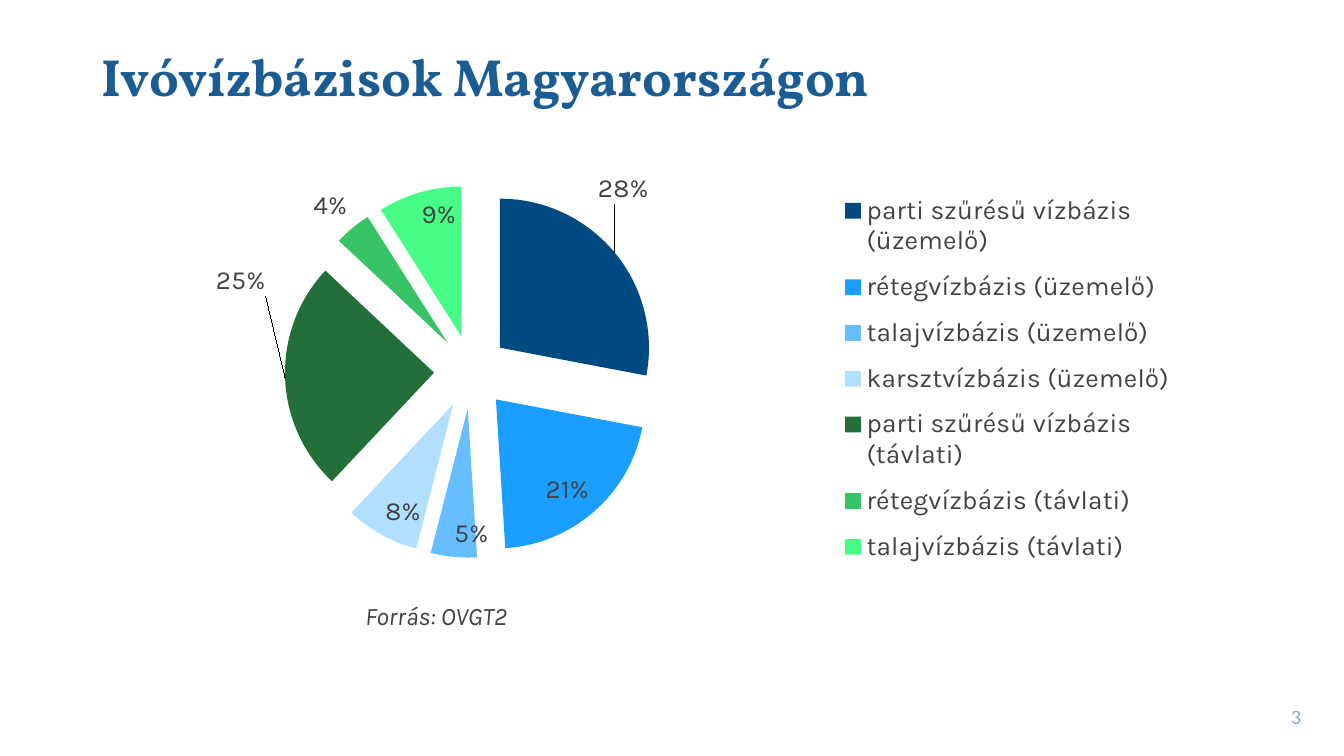
from lxml import etree
from pptx import Presentation
from pptx.chart.data import CategoryChartData
from pptx.dml.color import RGBColor
from pptx.enum.chart import XL_CHART_TYPE, XL_LABEL_POSITION, XL_LEGEND_POSITION
from pptx.enum.text import MSO_ANCHOR, MSO_AUTO_SIZE
from pptx.oxml.ns import qn
from pptx.util import Pt

PIE = XL_CHART_TYPE.PIE
INSIDE = XL_LABEL_POSITION.INSIDE_END
OUTSIDE = XL_LABEL_POSITION.OUTSIDE_END
RIGHT = XL_LEGEND_POSITION.RIGHT
TOP, MIDDLE = MSO_ANCHOR.TOP, MSO_ANCHOR.MIDDLE
GROW = MSO_AUTO_SIZE.SHAPE_TO_FIT_TEXT

PX = 914400 / 134.4
TEXT = "424242"
SLICES = [
    ("parti szűrésű vízbázis (üzemelő)", 28, "004A81"),
    ("rétegvízbázis (üzemelő)", 21, "1A9EFF"),
    ("talajvízbázis (üzemelő)", 5, "67BEFF"),
    ("karsztvízbázis (üzemelő)", 8, "B3DFFF"),
    ("parti szűrésű vízbázis (távlati)", 25, "236F3A"),
    ("rétegvízbázis (távlati)", 4, "38C367"),
    ("talajvízbázis (távlati)", 9, "47FD86"),
]
OUTSIDE_LABELS = {0: (-0.02, -0.09), 4: (-0.01, -0.2), 5: None}


def px(n):
    return round(n * PX)


def rgb(color):
    return RGBColor.from_string(color)


def make_layout(**values):
    layout = etree.Element(qn("c:layout"))
    manual = etree.SubElement(layout, qn("c:manualLayout"))
    for tag, value in values.items():
        etree.SubElement(manual, qn(f"c:{tag}")).set("val", str(value))
    return layout


class Deck:
    body_font = "Karla"

    def __init__(self, prs):
        self.s = prs.slides.add_slide(prs.slide_layouts[6])

    def style(self, font, size, color, name=None):
        font.name = name or self.body_font
        font.size = Pt(size)
        font.color.rgb = rgb(color)

    def text(self, text, box, size, color, name=None, bold=False, italic=False,
             insets=None, anchor=TOP, wrap=True):
        sp = self.s.shapes.add_textbox(*map(px, box))
        tf = sp.text_frame
        tf.word_wrap = wrap
        tf.vertical_anchor = anchor
        if not wrap:
            tf.auto_size = GROW
        if insets:
            tf.margin_left, tf.margin_top, tf.margin_right, tf.margin_bottom = map(px, insets)
        tf.text = text
        r = tf.paragraphs[0].runs[0]
        self.style(r.font, size, color, name)
        r.font.bold, r.font.italic = bold, italic

    def pie(self, slices, box, size, color, explosion, outside):
        data = CategoryChartData()
        data.categories = [name for name, _, _ in slices]
        data.add_series("Series 1", [value for _, value, _ in slices])
        chart = self.s.shapes.add_chart(PIE, *map(px, box), data).chart
        chart.has_title = False
        self.style(chart.font, size, color)
        self.legend(chart, size, color)

        plot = chart.plots[0]
        plot.vary_by_categories = True
        area = chart._chartSpace.find(".//" + qn("c:plotArea"))
        for old in area.findall(qn("c:layout")):
            area.remove(old)
        area.insert(0, make_layout(layoutTarget="inner", xMode="edge", yMode="edge",
                                   x=0.19, y=0.11, w=0.33, h=0.77))

        series = plot.series[0]
        burst = etree.Element(qn("c:explosion"))
        burst.set("val", str(explosion))
        series._element.find(qn("c:tx")).addnext(burst)
        for i, (_, _, fill) in enumerate(slices):
            point_fill = series.points[i].format.fill
            point_fill.solid()
            point_fill.fore_color.rgb = rgb(fill)

        labels = series.data_labels
        labels.show_value = False
        labels.show_percentage = True
        labels.number_format = "0%"
        labels.number_format_is_linked = False
        labels.position = INSIDE
        self.style(labels.font, size, color)
        for i, shift in outside.items():
            label = series.points[i].data_label
            self.style(label.font, size, color)
            label.position = OUTSIDE
        for item in labels._element.findall(qn("c:dLbl")):
            item.find(qn("c:showVal")).set("val", "0")
            item.find(qn("c:showPercent")).set("val", "1")
            idx = item.find(qn("c:idx"))
            shift = outside[int(idx.get("val"))]
            if shift:
                idx.addnext(make_layout(x=shift[0], y=shift[1]))

    def legend(self, chart, size, color):
        chart.has_legend = True
        legend = chart.legend
        legend.position = RIGHT
        legend.include_in_layout = False
        self.style(legend.font, size, color)
        element = legend._element
        for old in element.findall(qn("c:layout")):
            element.remove(old)
        element.find(qn("c:legendPos")).addnext(
            make_layout(xMode="edge", yMode="edge", x=0.67, y=0.1, w=0.3, h=0.82))


def main():
    prs = Presentation()
    prs.slide_width, prs.slide_height = px(1344), px(756)
    deck = Deck(prs)
    deck.text("3", (1286, 696, 58, 40), 11, "8CADD1", "Calibri",
              insets=(5, 0, 0, 0), anchor=MIDDLE)
    deck.text("Ivóvízbázisok Magyarországon", (101, 44, 1185, 126), 28, "1B5C93",
              "Vollkorn", bold=True, insets=(0, 0, 0, 0))
    deck.pie(SLICES, (62, 132, 1153, 484), 14, TEXT, 25, OUTSIDE_LABELS)
    deck.text("Forrás: OVGT2", (352, 594, 185, 44), 13.5, TEXT, italic=True, wrap=False)
    prs.save("out.pptx")


if __name__ == "__main__":
    main()
